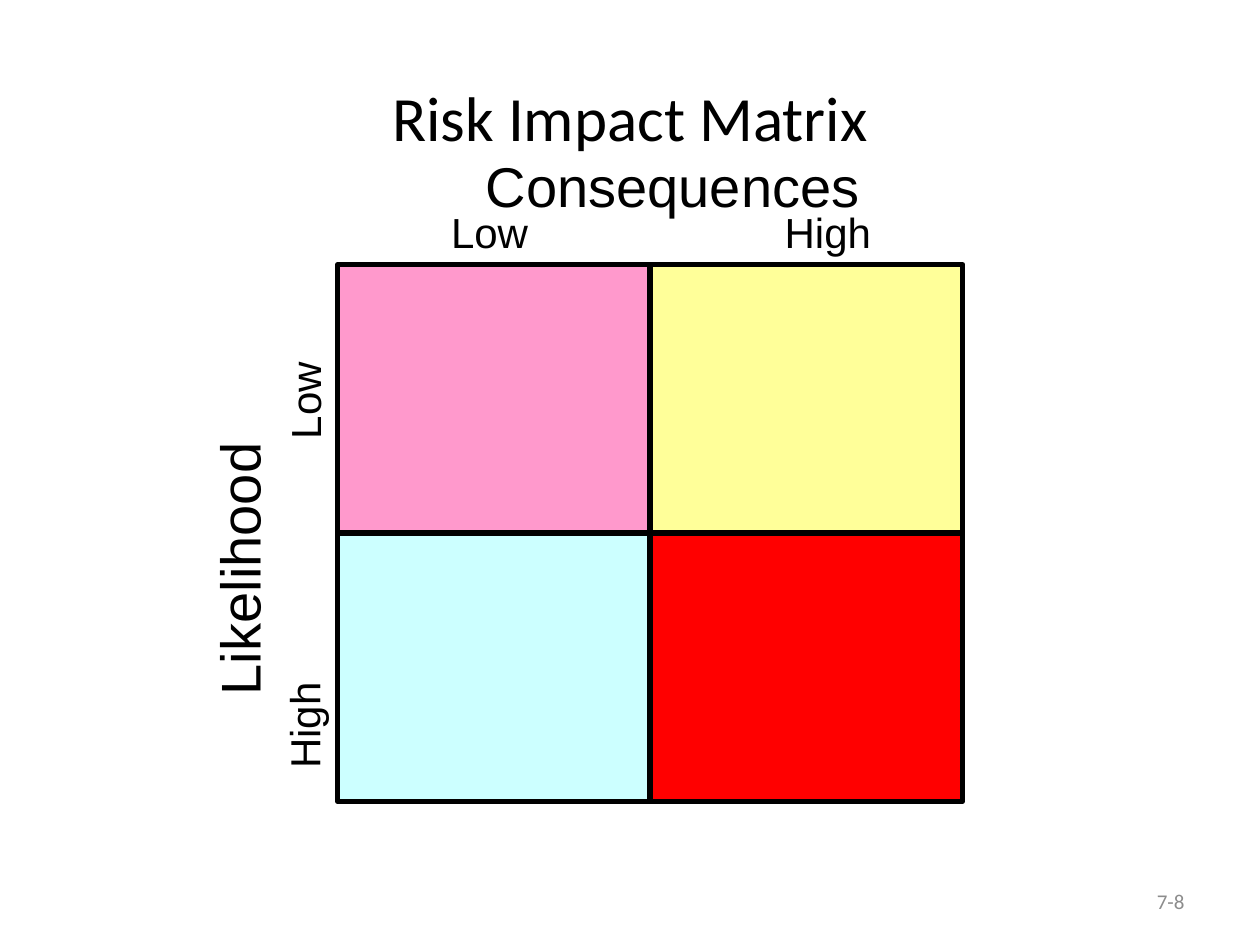
from pptx import Presentation
from pptx.dml.color import RGBColor
from pptx.enum import shapes, text
from pptx.util import Inches, Pt

BLACK = RGBColor(0x00, 0x00, 0x00)
GRAY = RGBColor(0x8C, 0x8C, 0x8C)
PINK = RGBColor(0xFF, 0x99, 0xCC)
YELLOW = RGBColor(0xFF, 0xFF, 0x99)
CYAN = RGBColor(0xCC, 0xFF, 0xFF)
RED = RGBColor(0xFF, 0x00, 0x00)

MATRIX_LEFT, MATRIX_TOP = 2.68, 2.1
CELL_WIDTH, CELL_HEIGHT = 2.48, 2.13
MATRIX_COLORS = [[PINK, YELLOW], [CYAN, RED]]


def write_text(shape, content, *, size, font="Arial", color=BLACK,
               align=text.PP_ALIGN.CENTER, anchor=text.MSO_ANCHOR.TOP):
    frame = shape.text_frame
    frame.word_wrap = True
    frame.vertical_anchor = anchor
    paragraph = frame.paragraphs[0]
    paragraph.text = content
    paragraph.alignment = align
    paragraph.font.size = Pt(size)
    paragraph.font.name = font
    paragraph.font.color.rgb = color


class MatrixSlide:
    """Holds the slide and the style of its elements."""

    line_width = Pt(3)

    def __init__(self, presentation):
        self.slide = presentation.slides.add_slide(presentation.slide_layouts[5])

    def title(self, content, left, top, width, height):
        title = self.slide.shapes.title
        title.left, title.top = Inches(left), Inches(top)
        title.width, title.height = Inches(width), Inches(height)
        write_text(title, content, size=36, font="Calibri",
                   anchor=text.MSO_ANCHOR.MIDDLE)

    def label(self, content, left, top, width, height, rotation=0, **style):
        box = self.slide.shapes.add_textbox(
            Inches(left), Inches(top), Inches(width), Inches(height))
        box.rotation = rotation
        write_text(box, content, **style)

    def cell(self, row, column, color):
        cell = self.slide.shapes.add_shape(
            shapes.MSO_SHAPE.RECTANGLE,
            Inches(MATRIX_LEFT + column * CELL_WIDTH),
            Inches(MATRIX_TOP + row * CELL_HEIGHT),
            Inches(CELL_WIDTH), Inches(CELL_HEIGHT))
        cell.shadow.inherit = False
        cell.fill.solid()
        cell.fill.fore_color.rgb = color
        cell.line.color.rgb = BLACK
        cell.line.width = self.line_width


def main():
    presentation = Presentation()
    presentation.slide_width = Inches(10)
    presentation.slide_height = Inches(7.5)
    slide = MatrixSlide(presentation)

    slide.title("Risk Impact Matrix", 0.5, 0.3, 9, 1.25)
    slide.label("7-8", 7.17, 6.95, 2.33, 0.4, size=12, font="Calibri",
                color=GRAY, align=text.PP_ALIGN.RIGHT,
                anchor=text.MSO_ANCHOR.MIDDLE)

    slide.label("Consequences", 3.31, 1.15, 4.06, 0.63, size=32)
    slide.label("Likelihood", 0.49, 4.2, 2.8, 0.63, rotation=270, size=32)
    for content, left, top, width, rotation in [
        ("High", 1.78, 5.51, 1.26, 270),
        ("Low", 1.92, 2.93, 0.99, 270),
        ("Low", 3.39, 1.59, 0.99, 0),
        ("High", 5.94, 1.59, 1.26, 0),
    ]:
        slide.label(content, left, top, width, 0.5, rotation, size=24)

    for row, colors in enumerate(MATRIX_COLORS):
        for column, color in enumerate(colors):
            slide.cell(row, column, color)

    presentation.save("out.pptx")


if __name__ == "__main__":
    main()
